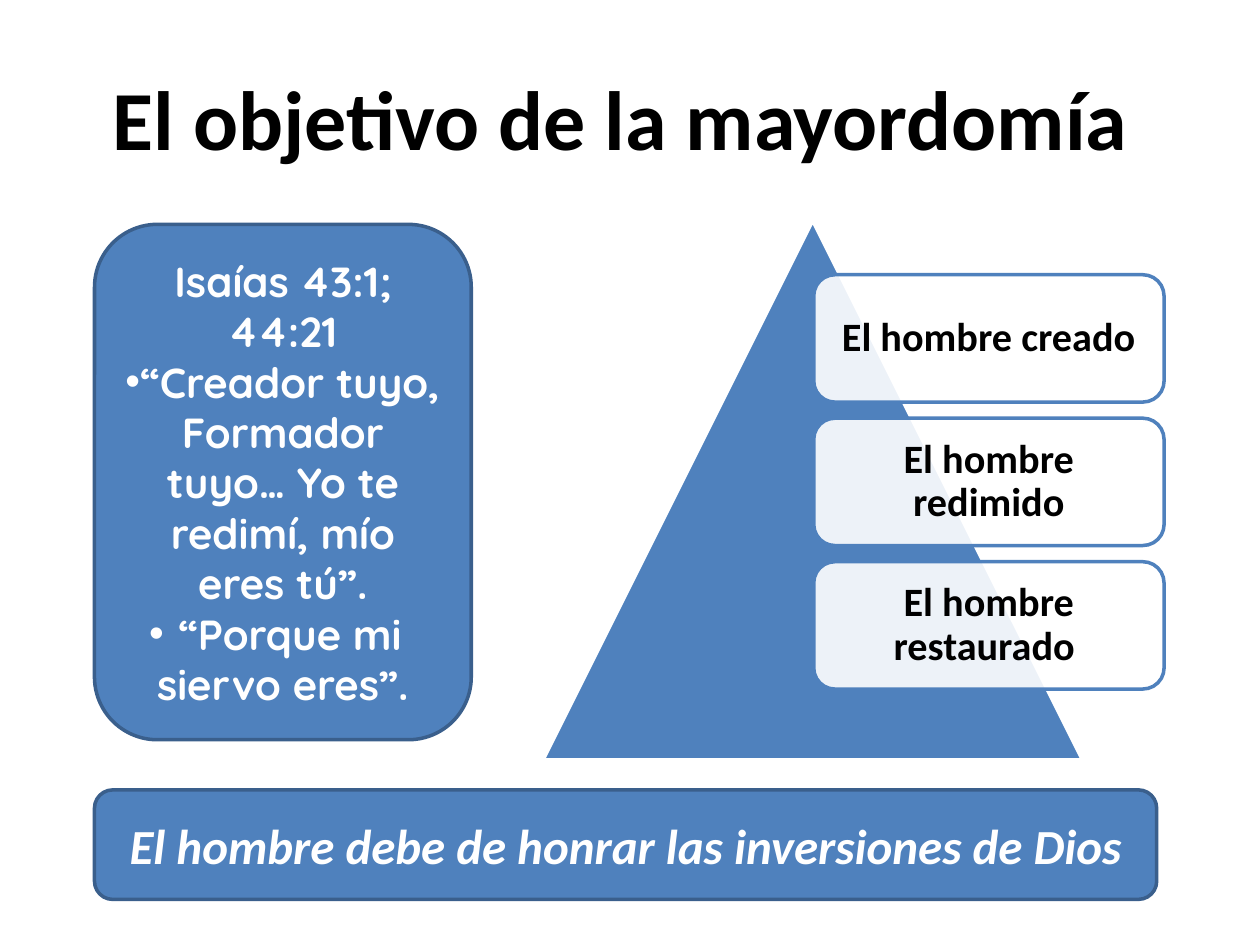
from lxml import etree
from pptx import Presentation
from pptx.dml.color import RGBColor
from pptx.enum.shapes import MSO_SHAPE
from pptx.enum.text import MSO_ANCHOR, PP_ALIGN
from pptx.oxml.ns import qn
from pptx.util import Pt

TRIANGLE = MSO_SHAPE.ISOSCELES_TRIANGLE
ROUNDED = MSO_SHAPE.ROUNDED_RECTANGLE
CENTER = PP_ALIGN.CENTER
MIDDLE = MSO_ANCHOR.MIDDLE

BLACK = RGBColor(0x00, 0x00, 0x00)
WHITE = RGBColor(0xFF, 0xFF, 0xFF)
BLUE = RGBColor(0x4F, 0x81, 0xBD)
DARK_BLUE = RGBColor(0x3A, 0x5F, 0x8C)

CARD_TOP, CARD_PITCH = 157, 82
STAGES = ["El hombre creado", "El hombre redimido", "El hombre restaurado "]
VERSES = [
    "Isaías 43:1; 44:21",
    "“Creador tuyo, Formador tuyo… Yo te redimí, mío eres tú”.",
    "“Porque mi siervo eres”.",
]


class SlideBuilder:
    font = "Calibri"
    line_width = 2

    def __init__(self, slide):
        self.slide = slide

    def shape(self, preset, box, fill, line, opacity=100):
        shape = self.slide.shapes.add_shape(preset, *map(Pt, box))
        shape.shadow.inherit = False
        shape.fill.solid()
        shape.fill.fore_color.rgb = fill
        shape.line.color.rgb = line
        shape.line.width = Pt(self.line_width)
        if opacity < 100:
            color = shape._element.spPr.find(qn("a:solidFill"))[0]
            etree.SubElement(color, qn("a:alpha"), val=str(opacity * 1000))
        return shape

    def text_box(self, box):
        return self.slide.shapes.add_textbox(*map(Pt, box))

    def set_text(self, holder, paragraphs, size, color, font=font, italic=False):
        """Fill a shape with bold centred paragraphs."""
        frame = holder.text_frame
        frame.word_wrap = True
        frame.vertical_anchor = MIDDLE
        frame.text = "\n".join(paragraphs)
        for paragraph in frame.paragraphs:
            paragraph.alignment = CENTER
            for run in paragraph.runs:
                run.font.name = font
                run.font.size = Pt(size)
                run.font.bold = True
                run.font.italic = italic
                run.font.color.rgb = color
        return frame

    def bullet(self, paragraph):
        properties = paragraph._p.get_or_add_pPr()
        etree.SubElement(properties, qn("a:buFont"), typeface="Arial")
        etree.SubElement(properties, qn("a:buChar"), char="•")


def main():
    deck = Presentation()
    deck.slide_width, deck.slide_height = Pt(720), Pt(540)
    builder = SlideBuilder(deck.slides.add_slide(deck.slide_layouts[6]))

    title = builder.text_box((36, 21.6, 648, 90))
    builder.set_text(title, ["El objetivo de la mayordomía "], 48, BLACK)

    builder.shape(TRIANGLE, (310.3, 126, 308.2, 308.2), BLUE, WHITE)
    for index, stage in enumerate(STAGES):
        top = CARD_TOP + index * CARD_PITCH
        card = builder.shape(ROUNDED, (465, top, 200.2, 72.8), WHITE, BLUE, opacity=90)
        frame = builder.set_text(card, [stage], 23, BLACK)
        frame.paragraphs[0].line_spacing = 0.9

    scripture = builder.shape(ROUNDED, (54, 128.2, 215.3, 294.5), BLUE, DARK_BLUE)
    frame = builder.set_text(scripture, VERSES, 24, WHITE, font="Quicksand")
    for quote in frame.paragraphs[1:]:
        builder.bullet(quote)

    conclusion = builder.shape(ROUNDED, (54, 451.4, 607, 62.6), BLUE, DARK_BLUE)
    builder.set_text(conclusion, ["El hombre debe de honrar las inversiones de Dios"],
                     28, WHITE, italic=True)

    deck.save("out.pptx")


if __name__ == "__main__":
    main()
